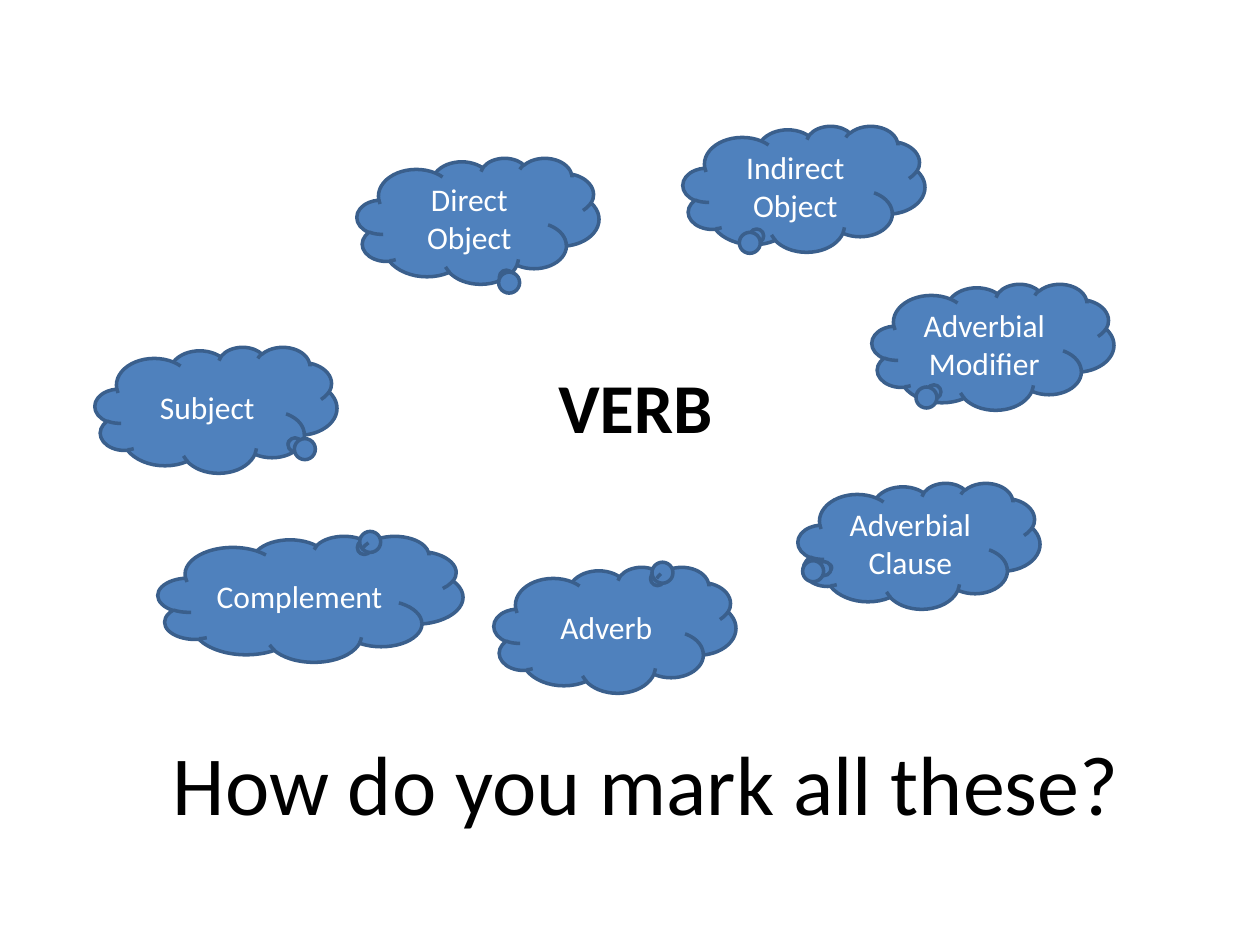
from pptx import Presentation
from pptx.dml.color import RGBColor
from pptx.enum.shapes import MSO_SHAPE as Shape
from pptx.enum.text import MSO_ANCHOR as Anchor, MSO_AUTO_SIZE as AutoSize, PP_ALIGN as Align
from pptx.util import Emu, Pt

BLACK = RGBColor(0x00, 0x00, 0x00)
WHITE = RGBColor(0xFF, 0xFF, 0xFF)
BLUE = RGBColor(0x4F, 0x81, 0xBD)
DARK_BLUE = RGBColor(0x3A, 0x5F, 0x8C)
EMU_PER_PX = 914400 / 126


def px(length):
    return Emu(round(length * EMU_PER_PX))


def write(shape, text, size, color, bold=False, align=Align.CENTER, anchor=Anchor.MIDDLE):
    frame = shape.text_frame
    frame.word_wrap = True
    frame.auto_size = AutoSize.NONE
    frame.vertical_anchor = anchor
    para = frame.paragraphs[0]
    para.alignment = align
    span = para.add_run()
    span.text = text
    span.font.name = "Calibri"
    span.font.size = Pt(size)
    span.font.bold = bold
    span.font.color.rgb = color


deck = Presentation()
deck.slide_width = px(1260)
deck.slide_height = px(945)
page = deck.slides.add_slide(deck.slide_layouts[5])

title = page.shapes.title
title.left, title.top, title.width, title.height = px(126), px(725), px(1040), px(114)
write(title, "How do you mark all these?", 48, BLACK, anchor=Anchor.BOTTOM)

verb = page.shapes.add_textbox(px(546), px(357), px(199), px(97))
write(verb, "VERB", 40, BLACK, bold=True, align=Align.LEFT, anchor=Anchor.TOP)

clouds = [
    ("Subject", 95, 347, 242, 0.313, 0.265),
    ("Direct Object", 357, 158, 242, 0.119, 0.452),
    ("Indirect Object", 683, 126, 242, -0.187, 0.358),
    ("Adverb", 494, 567, 242, 0.174, -0.402),
    ("Adverbial Modifier", 872, 284, 242, -0.236, 0.345),
    ("Adverbial Clause", 798, 483, 242, -0.375, 0.172),
    ("Complement", 158, 536, 305, 0.174, -0.402),
]
for label, left, top, width, tail_x, tail_y in clouds:
    cloud = page.shapes.add_shape(Shape.CLOUD_CALLOUT, px(left), px(top), px(width), px(126))
    cloud.adjustments[0] = tail_x
    cloud.adjustments[1] = tail_y
    cloud.shadow.inherit = False
    cloud.fill.solid()
    cloud.fill.fore_color.rgb = BLUE
    cloud.line.color.rgb = DARK_BLUE
    cloud.line.width = Pt(2)
    write(cloud, label, 18, WHITE)

deck.save("out.pptx")
